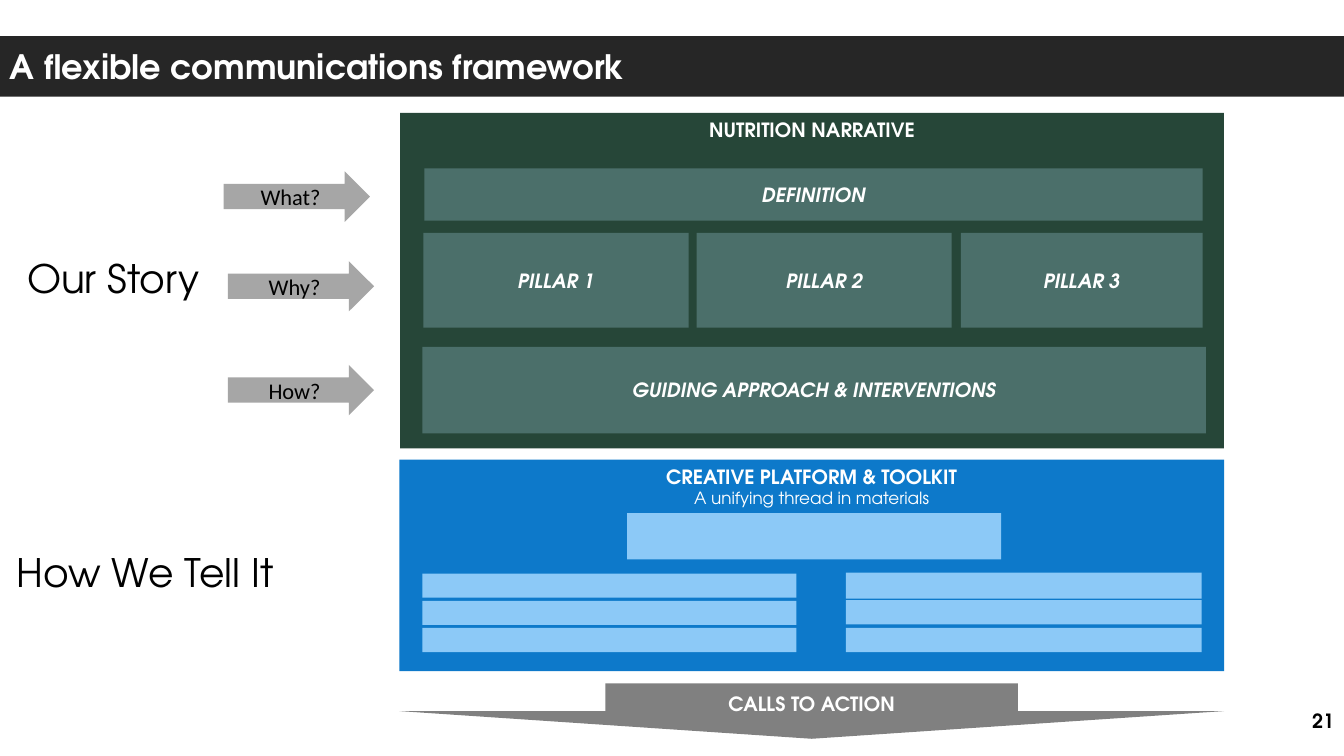
from pptx import Presentation
from pptx.dml.color import RGBColor
from pptx.enum.shapes import MSO_SHAPE
from pptx.enum.text import MSO_ANCHOR, MSO_AUTO_SIZE, PP_ALIGN
from pptx.util import Inches, Pt

RECT, RIGHT, DOWN = MSO_SHAPE.RECTANGLE, MSO_SHAPE.RIGHT_ARROW, MSO_SHAPE.DOWN_ARROW
TOP, MID = MSO_ANCHOR.TOP, MSO_ANCHOR.MIDDLE
START, CENTRE, END = PP_ALIGN.LEFT, PP_ALIGN.CENTER, PP_ALIGN.RIGHT
FIT = MSO_AUTO_SIZE.SHAPE_TO_FIT_TEXT

WHITE = RGBColor(0xFF, 0xFF, 0xFF)
BLACK = RGBColor(0x00, 0x00, 0x00)
DARK = RGBColor(0x26, 0x26, 0x26)
GREEN = RGBColor(0x26, 0x46, 0x38)
SAGE = RGBColor(0x4B, 0x6F, 0x6A)
BLUE = RGBColor(0x0D, 0x79, 0xCA)
SKY = RGBColor(0x8C, 0xC9, 0xF7)
SILVER = RGBColor(0xA6, 0xA6, 0xA6)
GREY = RGBColor(0x80, 0x80, 0x80)

WIDE, HIGH = Inches(13.33), Inches(7.5)
SANS = "TeX Gyre Adventor"

# Text formats
HEAD = {"name": SANS, "size": Pt(14), "bold": True}
TITLE = {**HEAD, "size": Pt(24)}
ITEM = {**HEAD, "italic": True}
NOTE = {"name": SANS, "size": Pt(12), "bold": False}
SIDE = {"name": SANS, "size": Pt(28)}
ASK = {"name": "Calibri", "size": Pt(16)}


def place(x, y, w, h):
    """Turn percent shares of the slide into lengths."""
    return [int(part * full / 100)
            for part, full in zip((x, y, w, h), (WIDE, HIGH, WIDE, HIGH))]


def write(frame, lines, color, align, anchor):
    frame.vertical_anchor = anchor
    for i, (text, form) in enumerate(lines):
        para = frame.paragraphs[0] if i == 0 else frame.add_paragraph()
        para.alignment = align
        run = para.add_run()
        run.text = text
        for key, value in form.items():
            setattr(run.font, key, value)
        run.font.color.rgb = color


def block(slide, area, fill, lines=(), kind=RECT, color=WHITE, align=CENTRE, anchor=MID):
    shape = slide.shapes.add_shape(kind, *place(*area))
    shape.shadow.inherit = False
    shape.fill.solid()
    shape.fill.fore_color.rgb = fill
    shape.line.fill.background()
    write(shape.text_frame, lines, color, align, anchor)


def label(slide, area, text, form, align=START, anchor=TOP, wrap=False):
    frame = slide.shapes.add_textbox(*place(*area)).text_frame
    frame.word_wrap = wrap
    if not wrap:
        frame.auto_size = FIT
    write(frame, [(text, form)], BLACK, align, anchor)


def story(slide):
    block(slide, (29.78, 14.93, 61.29, 44.4), GREEN,
          [("NUTRITION NARRATIVE", HEAD)], anchor=TOP)
    block(slide, (31.58, 22.27, 57.91, 6.93), SAGE, [("DEFINITION", ITEM)])
    pillars = [(31.51, 19.73), (51.84, 18.98), (71.49, 18)]
    for num, (x, w) in enumerate(pillars, 1):
        block(slide, (x, 30.8, w, 12.53), SAGE, [(f"PILLAR {num}", ITEM)])
    block(slide, (31.43, 45.87, 58.29, 11.47), SAGE,
          [("GUIDING APPROACH & INTERVENTIONS", ITEM)])

    # Question arrows
    label(slide, (1.28, 32.93, 14.4, 7.6), "Our Story", SIDE)
    for x, y, text in [(16.65, 22.67, "What?"), (16.95, 34.53, "Why?"),
                       (16.95, 48.27, "How?")]:
        block(slide, (x, y, 10.88, 6.67), SILVER, [(text, ASK)], RIGHT, BLACK)


def toolkit(slide):
    label(slide, (0.53, 71.87, 21.16, 7.6), "How We Tell It", SIDE)
    block(slide, (29.71, 60.8, 61.37, 28), BLUE,
          [("CREATIVE PLATFORM & TOOLKIT", HEAD),
           ("A unifying thread in materials", NOTE)], anchor=TOP)
    block(slide, (46.66, 67.87, 27.83, 6.13), SKY)

    # Two stacks of bars: left, top, width, step, height of first bar
    for x, y, w, step, first in [(31.43, 75.87, 27.83, 3.6, 3.2),
                                 (62.94, 75.73, 26.48, 3.67, 3.47)]:
        for row in range(3):
            block(slide, (x, y + row * step, w, 3.2 if row else first), SKY)


def main():
    deck = Presentation()
    deck.slide_width, deck.slide_height = WIDE, HIGH
    slide = deck.slides.add_slide(deck.slide_layouts[6])

    # Title bar
    block(slide, (0, 4.8, 100, 8), DARK,
          [("A flexible communications framework", TITLE)], align=START)
    story(slide)
    toolkit(slide)

    # Foot of the slide
    block(slide, (29.71, 90.4, 61.37, 7.33), GREY, [("CALLS TO ACTION", HEAD)], DOWN)
    label(slide, (77.49, 92.67, 22.51, 5.33), "21", HEAD, END, MID, True)
    deck.save("out.pptx")


if __name__ == "__main__":
    main()
